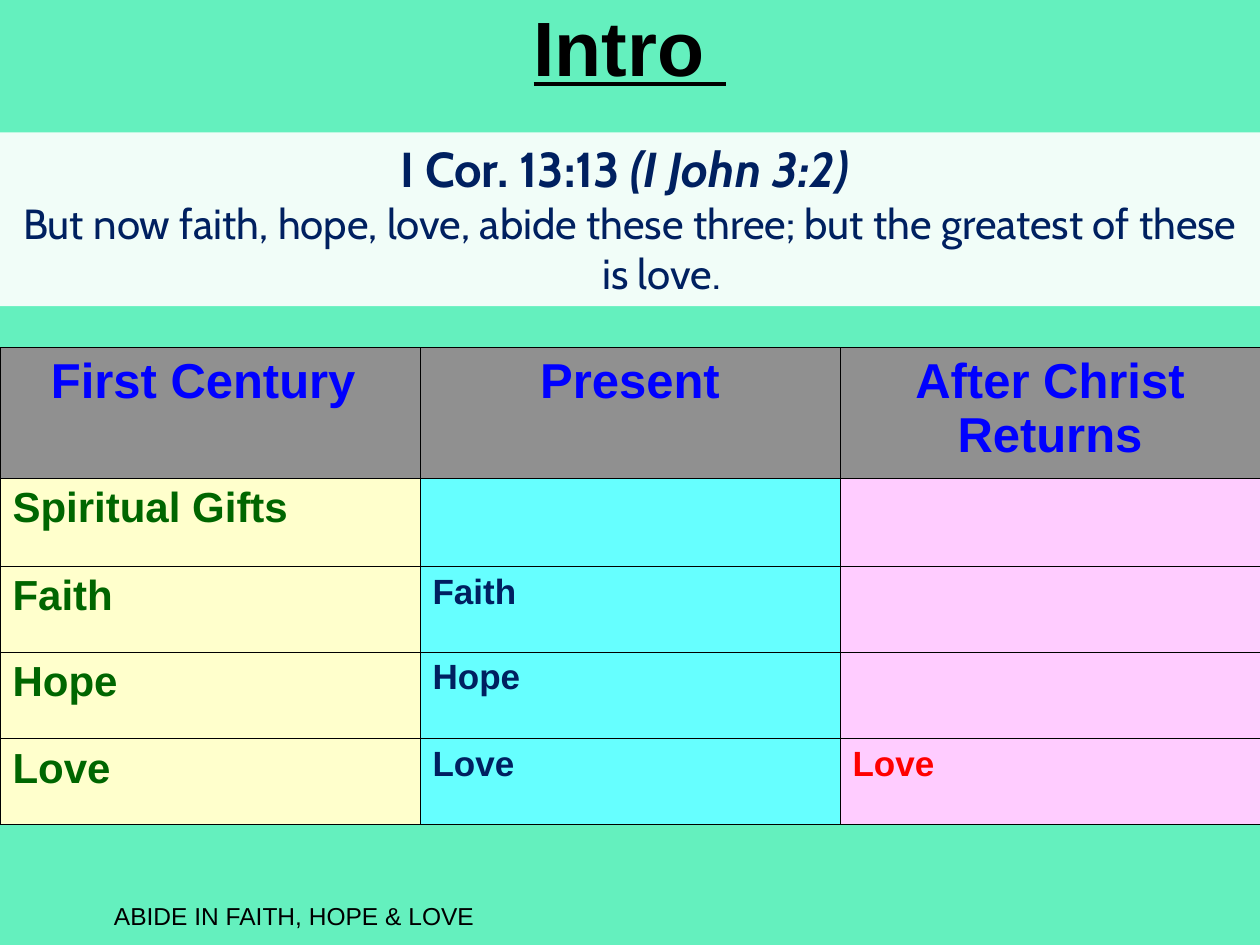
from lxml import etree
from pptx import Presentation
from pptx.dml.color import RGBColor
from pptx.enum.shapes import MSO_SHAPE
from pptx.enum.text import MSO_ANCHOR, PP_ALIGN
from pptx.oxml.ns import qn
from pptx.util import Inches, Pt

CENTER, LEFT = PP_ALIGN.CENTER, PP_ALIGN.LEFT
TOP, MIDDLE = MSO_ANCHOR.TOP, MSO_ANCHOR.MIDDLE
RECTANGLE = MSO_SHAPE.RECTANGLE

COLORS = {
    "background": "64F0BE", "panel": "F1FDF8", "black": "000000",
    "navy": "002060", "blue": "0000FF", "green": "006600", "red": "FF0000",
    "gray": "909090", "yellow": "FFFFCC", "cyan": "66FFFF", "pink": "FFCCFF",
}

TITLE = "Intro "
FOOTER = "ABIDE IN FAITH, HOPE & LOVE"
REFERENCE = ("I Cor. 13:13 ", "(I John 3:2) ")
VERSE = ("But now faith, hope, love, abide these three; "
         "but the greatest of these is love.")
ERAS = [
    ("First Century ", "Present", "After Christ Returns"),
    ("Spiritual Gifts", "", ""),
    ("Faith", "Faith", ""),
    ("Hope", "Hope", ""),
    ("Love", "Love", "Love"),
]
ROW_HEIGHTS = (0.97, 0.7, 0.68, 0.69, 0.68)

TITLE_FORMAT = {"size": 44, "color": "black", "bold": True, "underline": True}
FOOTER_FORMAT = {"size": 14, "color": "black"}
REFERENCE_FORMAT = {"name": "Cabin", "size": 28, "color": "navy", "bold": True}
VERSE_FORMAT = {"name": "Cabin", "size": 24, "color": "navy"}
HEADER_FORMAT = {"size": 28, "color": "blue", "bold": True}
COLUMN_FORMATS = [
    {"size": 24, "color": "green", "bold": True},
    {"size": 20, "color": "navy", "bold": True},
    {"size": 20, "color": "red", "bold": True},
]
COLUMN_FILLS = ("yellow", "cyan", "pink")


def rgb(name):
    return RGBColor.from_string(COLORS[name])


def fill_with(target, color):
    target.fill.solid()
    target.fill.fore_color.rgb = rgb(color)


def add_run(paragraph, text, style):
    run = paragraph.add_run()
    run.text = text
    values = {"name": "Arial", "bold": False, "italic": False} | style
    values["size"] = Pt(values["size"])
    run.font.color.rgb = rgb(values.pop("color"))
    for attribute, value in values.items():
        setattr(run.font, attribute, value)


def add_label(slide, box, text, style, anchor):
    frame = slide.shapes.add_textbox(*map(Inches, box)).text_frame
    frame.word_wrap = True
    frame.vertical_anchor = anchor
    frame.paragraphs[0].alignment = CENTER
    add_run(frame.paragraphs[0], text, style)


def add_verse_panel(slide):
    panel = slide.shapes.add_shape(
        RECTANGLE, *map(Inches, (0, 1.05, 10, 1.38)))
    panel.shadow.inherit = False
    fill_with(panel, "panel")
    panel.line.fill.background()
    frame = panel.text_frame
    frame.word_wrap = True
    frame.vertical_anchor = TOP
    reference, verse = frame.paragraphs[0], frame.add_paragraph()
    for paragraph in (reference, verse):
        paragraph.alignment = CENTER
        properties = paragraph._p.get_or_add_pPr()
        properties.set("marL", str(Inches(0.5)))
        properties.set("indent", str(-Inches(0.5)))
    add_run(reference, REFERENCE[0], REFERENCE_FORMAT)
    add_run(reference, REFERENCE[1], REFERENCE_FORMAT | {"italic": True})
    add_run(verse, VERSE, VERSE_FORMAT)


def add_borders(cell):
    properties = cell._tc.get_or_add_tcPr()
    for index, side in enumerate(("a:lnL", "a:lnR", "a:lnT", "a:lnB")):
        line = etree.Element(qn(side), w=str(Pt(0.5)))
        fill = etree.SubElement(line, qn("a:solidFill"))
        etree.SubElement(fill, qn("a:srgbClr"), val=COLORS["black"])
        properties.insert(index, line)


def add_era_table(slide):
    table = slide.shapes.add_table(
        len(ERAS), len(ERAS[0]), Inches(0), Inches(2.76),
        Inches(10), Inches(sum(ROW_HEIGHTS))).table
    table.first_row = table.horz_banding = False
    for row, height in zip(table.rows, ROW_HEIGHTS):
        row.height = Inches(height)
    for r, texts in enumerate(ERAS):
        for c, text in enumerate(texts):
            is_header = r == 0
            cell = table.cell(r, c)
            fill_with(cell, "gray" if is_header else COLUMN_FILLS[c])
            add_borders(cell)
            paragraph = cell.text_frame.paragraphs[0]
            paragraph.alignment = CENTER if is_header else LEFT
            if text:
                style = HEADER_FORMAT if is_header else COLUMN_FORMATS[c]
                add_run(paragraph, text, style)


def main():
    deck = Presentation()
    deck.slide_width, deck.slide_height = Inches(10), Inches(7.5)
    slide = deck.slides.add_slide(deck.slide_layouts[6])
    fill_with(slide.background, "background")
    add_label(slide, (0, 0, 10, 0.72), TITLE, TITLE_FORMAT, MIDDLE)
    add_label(slide, (0.5, 7.1, 3.67, 0.4), FOOTER, FOOTER_FORMAT, TOP)
    add_era_table(slide)
    add_verse_panel(slide)
    deck.save("out.pptx")


if __name__ == "__main__":
    main()
